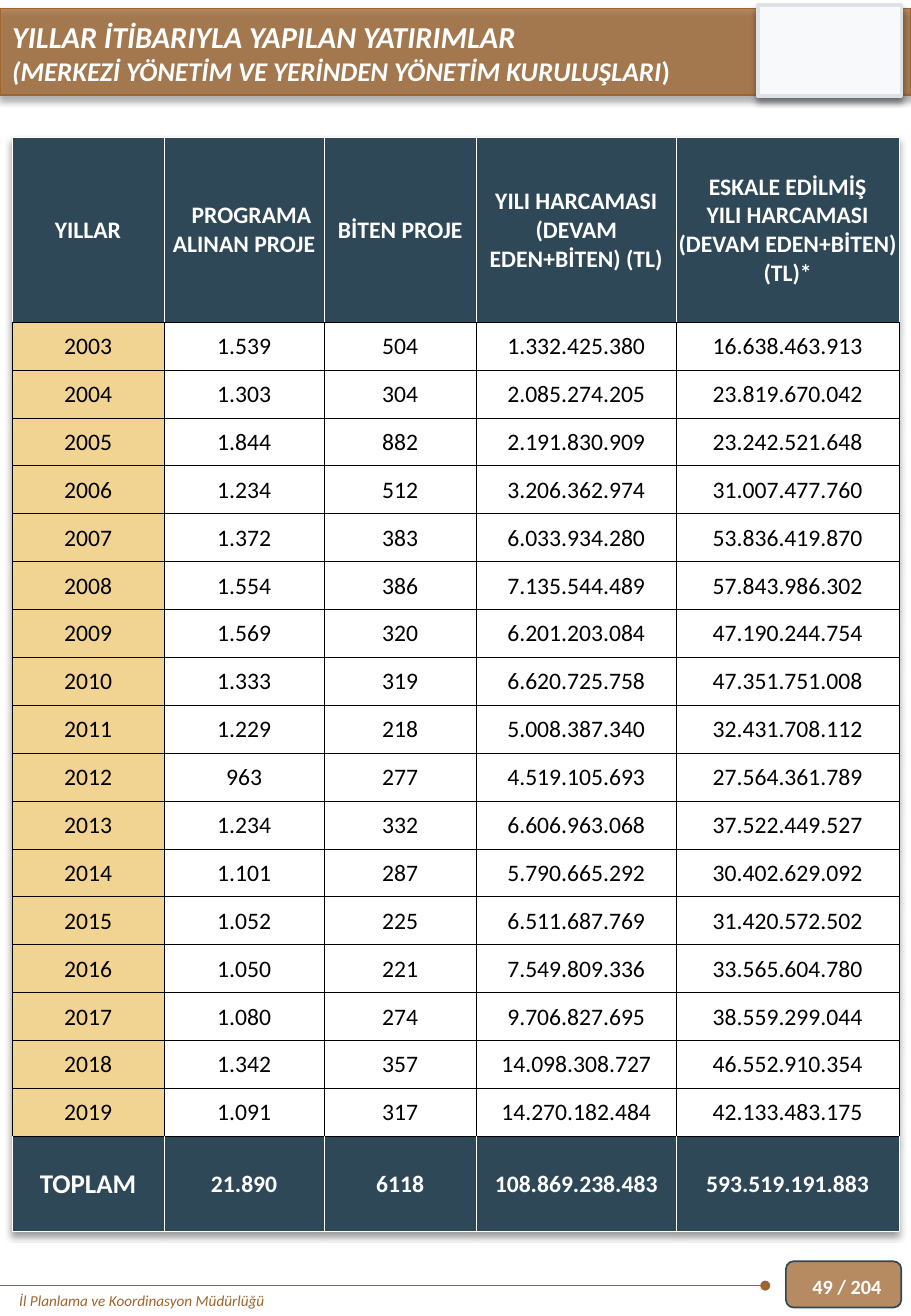
import pptx
import pptx.util
import pptx.dml.color
import pptx.enum.shapes
import pptx.enum.text
import pptx.oxml
import pptx.oxml.ns
from lxml import etree

PX = 9144  # EMU per px, 100 px to the inch
RGBColor = pptx.dml.color.RGBColor
BROWN = RGBColor(0x9E, 0x65, 0x2E)
NAVY = RGBColor(0x2F, 0x48, 0x58)
SAND = RGBColor(0xF2, 0xD4, 0x92)
WHITE = RGBColor(0xFF, 0xFF, 0xFF)
BLACK = RGBColor(0, 0, 0)
PALE = RGBColor(0xF8, 0xF9, 0xFA)
GREY = RGBColor(0xDE, 0xE2, 0xE6)

SHADOW = (
    '<a:effectLst %s><a:outerShdw blurRad="50800" dist="38100" dir="5400000" algn="t" rotWithShape="0">'
    '<a:srgbClr val="000000"><a:alpha val="40000"/></a:srgbClr></a:outerShdw></a:effectLst>'
    % pptx.oxml.ns.nsdecls("a")
)
HEADERS = [
    "YILLAR",
    "PROGRAMA ALINAN PROJE",
    "BİTEN PROJE",
    "YILI HARCAMASI\v(DEVAM EDEN+BİTEN) (TL)",
    "ESKALE EDİLMİŞ\nYILI HARCAMASI (DEVAM EDEN+BİTEN) (TL)*",
]
INVESTMENTS = [
    ("2003", "1.539", "504", "1.332.425.380", "16.638.463.913"),
    ("2004", "1.303", "304", "2.085.274.205", "23.819.670.042"),
    ("2005", "1.844", "882", "2.191.830.909", "23.242.521.648"),
    ("2006", "1.234", "512", "3.206.362.974", "31.007.477.760"),
    ("2007", "1.372", "383", "6.033.934.280", "53.836.419.870"),
    ("2008", "1.554", "386", "7.135.544.489", "57.843.986.302"),
    ("2009", "1.569", "320", "6.201.203.084", "47.190.244.754"),
    ("2010", "1.333", "319", "6.620.725.758", "47.351.751.008"),
    ("2011", "1.229", "218", "5.008.387.340", "32.431.708.112"),
    ("2012", "963", "277", "4.519.105.693", "27.564.361.789"),
    ("2013", "1.234", "332", "6.606.963.068", "37.522.449.527"),
    ("2014", "1.101", "287", "5.790.665.292", "30.402.629.092"),
    ("2015", "1.052", "225", "6.511.687.769", "31.420.572.502"),
    ("2016", "1.050", "221", "7.549.809.336", "33.565.604.780"),
    ("2017", "1.080", "274", "9.706.827.695", "38.559.299.044"),
    ("2018", "1.342", "357", "14.098.308.727", "46.552.910.354"),
    ("2019", "1.091", "317", "14.270.182.484", "42.133.483.175"),
]
TOTALS = ("TOPLAM", "21.890", "6118", "108.869.238.483", "593.519.191.883")
COLUMN_WIDTHS = (125, 132, 125, 165, 183)


def emu(*lengths):
    return [length * PX for length in lengths]


def style_runs(paragraph, size, color, bold=False, italic=False):
    for run in paragraph.runs:
        run.font.name = "Calibri"
        run.font.size = pptx.util.Pt(size)
        run.font.color.rgb = color
        run.font.bold = bold
        run.font.italic = italic


def add_panel(slide, kind, box, fill, line, line_width, alpha=None, shadow=False):
    shape = slide.shapes.add_shape(kind, *emu(*box))
    shape.shadow.inherit = False
    shape.fill.solid()
    shape.fill.fore_color.rgb = fill
    shape.line.color.rgb = line
    shape.line.width = pptx.util.Pt(line_width)
    properties = shape.element.spPr
    if alpha:
        color = properties.find(pptx.oxml.ns.qn("a:solidFill"))[0]
        etree.SubElement(color, pptx.oxml.ns.qn("a:alpha"), val=str(alpha * 1000))
    if shadow:
        empty = properties.find(pptx.oxml.ns.qn("a:effectLst"))
        properties.replace(empty, pptx.oxml.parse_xml(SHADOW))
    return shape


def add_label(slide, box, text, size, color, anchor, **style):
    frame = slide.shapes.add_textbox(*emu(*box)).text_frame
    frame.word_wrap = True
    frame.vertical_anchor = anchor
    frame.text = text
    style_runs(frame.paragraphs[0], size, color, **style)


def build_header(slide, left, top, width, height):
    rectangle = pptx.enum.shapes.MSO_SHAPE.RECTANGLE
    add_panel(slide, rectangle, (left, top, width, height), BROWN, BROWN, 1, alpha=75, shadow=True)
    add_panel(slide, rectangle, (left + width - 126, top - 3, 118, 75), PALE, GREY, 2, shadow=True)

    # Title, brought in front of the banner
    title = slide.shapes.title
    title.left, title.top, title.width, title.height = emu(left, top + 3, width, 67)
    frame = title.text_frame
    frame.word_wrap = True
    frame.auto_size = pptx.enum.text.MSO_AUTO_SIZE.NONE
    frame.vertical_anchor = pptx.enum.text.MSO_ANCHOR.TOP
    frame.text = "YILLAR İTİBARIYLA YAPILAN YATIRIMLAR\n(MERKEZİ YÖNETİM VE YERİNDEN YÖNETİM KURULUŞLARI"
    frame.paragraphs[1].add_run().text = ")"
    for paragraph, size in zip(frame.paragraphs, (18, 16)):
        paragraph.alignment = pptx.enum.text.PP_ALIGN.LEFT
        style_runs(paragraph, size, WHITE, bold=True, italic=True)
    frame.paragraphs[1].runs[-1].font.italic = False
    title.element.getparent().append(title.element)


def set_borders(cell, left, right, top, bottom):
    properties = cell._tc.get_or_add_tcPr()
    for side, color in zip("LRTB", (left, right, top, bottom)):
        properties.append(pptx.oxml.parse_xml(
            '<a:ln%s %s w="3175"><a:solidFill><a:srgbClr val="%s"/></a:solidFill></a:ln%s>'
            % (side, pptx.oxml.ns.nsdecls("a"), color, side)))


def fill_cell(cell, text, size, fill, color, bold, borders):
    set_borders(cell, *borders)
    cell.fill.solid()
    cell.fill.fore_color.rgb = fill
    cell.margin_left = cell.margin_right = cell.margin_top = PX
    cell.margin_bottom = 0
    cell.vertical_anchor = pptx.enum.text.MSO_ANCHOR.MIDDLE
    cell.text_frame.text = text
    for paragraph in cell.text_frame.paragraphs:
        paragraph.alignment = pptx.enum.text.PP_ALIGN.CENTER
        style_runs(paragraph, size, color, bold=bold)


def build_table(slide, left, top, width, height, header_height=152, total_height=78):
    rows = [HEADERS, *INVESTMENTS, TOTALS]
    last = len(rows) - 1
    frame = slide.shapes.add_table(len(rows), len(HEADERS), *emu(left, top, width, height))
    table = frame.table
    table.first_row = table.horz_banding = False
    table._tbl.tblPr.insert(0, pptx.oxml.parse_xml(SHADOW))
    for column, column_width in zip(table.columns, COLUMN_WIDTHS):
        column.width = column_width * PX
    year_height = (height - header_height - total_height) * PX // len(INVESTMENTS)
    for index, values in enumerate(rows):
        table.rows[index].height = year_height
        for position, text in enumerate(values):
            cell = table.cell(index, position)
            if index == 0:
                fill_cell(cell, text, 14, NAVY, WHITE, True, (WHITE, WHITE, WHITE, BLACK))
            elif index == last:
                size = 14 if position else 16
                fill_cell(cell, text, size, NAVY, WHITE, True, (WHITE, WHITE, BLACK, WHITE))
            else:
                fill_cell(cell, text, 14, WHITE if position else SAND, BLACK, False, [BLACK] * 4)
    table.rows[0].height = header_height * PX
    table.rows[last].height = total_height * PX
    # First line of the second heading is indented
    program = table.cell(0, 1).text_frame.paragraphs[0]
    program._p.get_or_add_pPr().set("indent", str(12 * PX))


def build_footer(slide, left, top, width, height):
    badge_left = left + width - 103
    add_panel(slide, pptx.enum.shapes.MSO_SHAPE.ROUNDED_RECTANGLE,
              (badge_left, top, 95, height), BROWN, NAVY, 1, alpha=75)
    rule_y = top + 20
    rule = slide.shapes.add_connector(
        pptx.enum.shapes.MSO_CONNECTOR.STRAIGHT, *emu(badge_left - 17, rule_y, left, rule_y))
    rule.line.color.rgb = BROWN
    rule.line.width = pptx.util.Pt(0.5)
    etree.SubElement(rule.line._get_or_add_ln(), pptx.oxml.ns.qn("a:headEnd"), type="oval")
    etree.SubElement(rule.element.spPr, pptx.oxml.ns.qn("a:effectLst"))
    anchors = pptx.enum.text.MSO_ANCHOR
    add_label(slide, (left + 6, rule_y, 469, 25), "İl Planlama ve Koordinasyon Müdürlüğü",
              9, BROWN, anchors.TOP, italic=True)
    add_label(slide, (badge_left + 12, top, 115 - 24, 42), "49 / 204", 12, WHITE, anchors.MIDDLE, bold=True)


def main():
    presentation = pptx.Presentation()
    presentation.slide_width, presentation.slide_height = emu(750, 1083)
    slide = presentation.slides.add_slide(presentation.slide_layouts[5])
    build_header(slide, 0, 7, 750, 71)
    build_table(slide, 10, 113, sum(COLUMN_WIDTHS), 900)
    build_footer(slide, 0, 1038, 750, 38)
    presentation.save("out.pptx")


if __name__ == "__main__":
    main()
